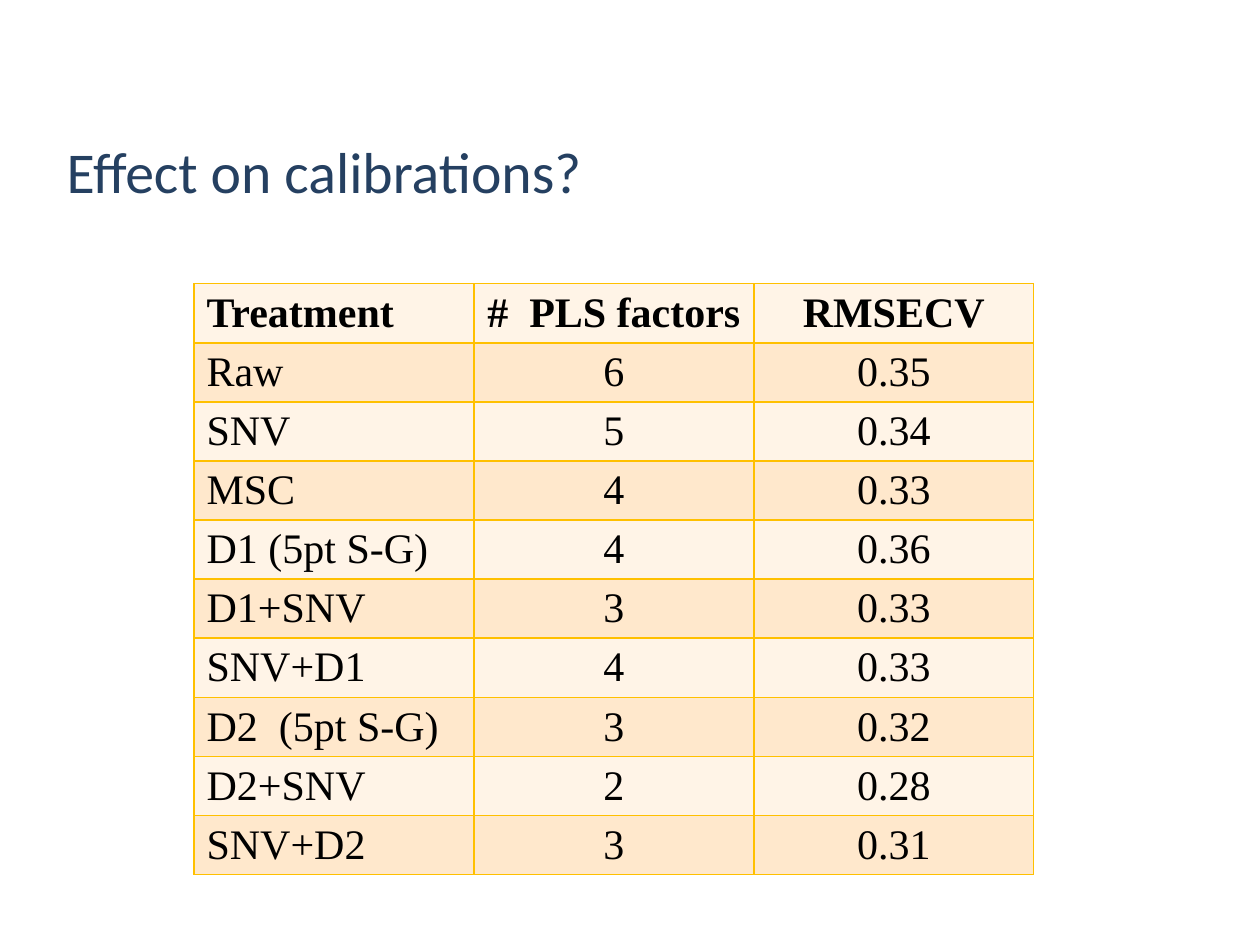
from dataclasses import dataclass

from lxml.etree import SubElement
from pptx import Presentation
from pptx.dml.color import RGBColor
from pptx.enum.text import MSO_ANCHOR, PP_ALIGN
from pptx.oxml.ns import qn
from pptx.util import Cm, Pt


@dataclass
class Treatment:
    name: str
    factors: str
    rmsecv: str


HEADER = Treatment("Treatment", "#  PLS factors", "RMSECV")
TREATMENTS = [
    Treatment("Raw", "6", "0.35"),
    Treatment("SNV", "5", "0.34"),
    Treatment("MSC", "4", "0.33"),
    Treatment("D1 (5pt S-G)", "4", "0.36"),
    Treatment("D1+SNV", "3", "0.33"),
    Treatment("SNV+D1", "4", "0.33"),
    Treatment("D2  (5pt S-G)", "3", "0.32"),
    Treatment("D2+SNV", "2", "0.28"),
    Treatment("SNV+D2", "3", "0.31"),
]
BANDS = ("FFF4E7", "FFE8CC")
BORDER = "FFC000"


def rgb(value: str) -> RGBColor:
    return RGBColor.from_string(value)


def add_run(p, text: str, font: str, size: float, color: str, bold: bool = False) -> None:
    r = p.add_run()
    r.text = text
    r.font.name = font
    r.font.size = Pt(size)
    r.font.bold = bold
    r.font.color.rgb = rgb(color)


def set_borders(cell, color: str, width: float) -> None:
    tcPr = cell._tc.get_or_add_tcPr()
    for i, side in enumerate(("a:lnL", "a:lnR", "a:lnT", "a:lnB")):
        ln = tcPr.makeelement(qn(side), {"w": str(Pt(width))})
        fill = SubElement(ln, qn("a:solidFill"))
        SubElement(fill, qn("a:srgbClr"), val=color)
        tcPr.insert(i, ln)


def add_title(s, text: str) -> None:
    sp = s.shapes.title
    sp.left, sp.top, sp.width, sp.height = Cm(1.09), Cm(1.93), Cm(22.86), Cm(3.18)
    tf = sp.text_frame
    tf.word_wrap = True
    tf.vertical_anchor = MSO_ANCHOR.MIDDLE
    p = tf.paragraphs[0]
    p.alignment = PP_ALIGN.LEFT
    p.line_spacing = 0.9
    add_run(p, text, "Calibri", 33, "254061")


def add_treatment_table(s, rows: list[Treatment]) -> None:
    table = s.shapes.add_table(
        len(rows), 3, Cm(3.91), Cm(5.72), Cm(16.93), Cm(10.3)
    ).table
    table.first_row = False
    table.horz_banding = False
    for i, row in enumerate(rows):
        for j, text in enumerate((row.name, row.factors, row.rmsecv)):
            cell = table.cell(i, j)
            cell.fill.solid()
            cell.fill.fore_color.rgb = rgb(BANDS[i % 2])
            set_borders(cell, BORDER, 1)
            p = cell.text_frame.paragraphs[0]
            p.alignment = PP_ALIGN.CENTER if j else PP_ALIGN.LEFT
            add_run(p, text, "Times New Roman", 24, "000000", bold=i == 0)


def main() -> None:
    prs = Presentation()
    prs.slide_width, prs.slide_height = Cm(25.4), Cm(19.05)
    s = prs.slides.add_slide(prs.slide_layouts[5])
    add_title(s, "Effect on calibrations?")
    add_treatment_table(s, [HEADER, *TREATMENTS])
    prs.save("out.pptx")


if __name__ == "__main__":
    main()
